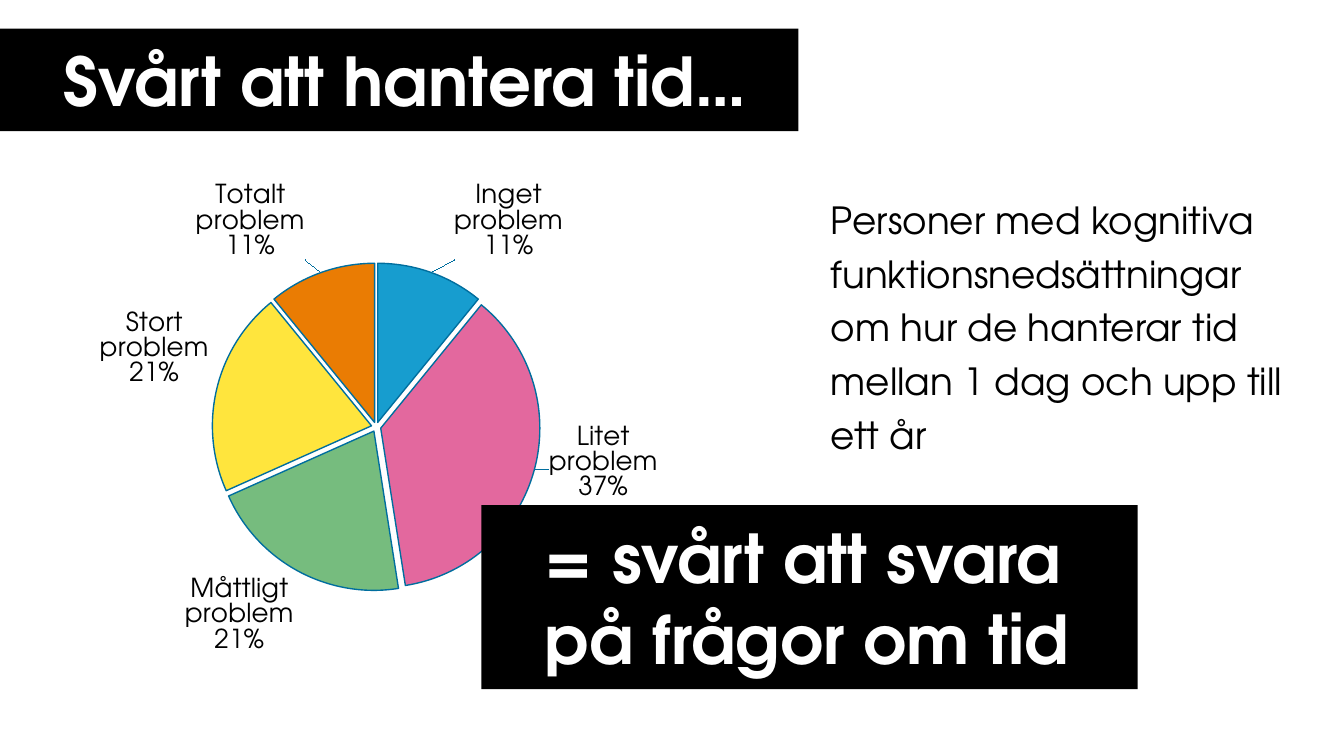
from copy import deepcopy
from dataclasses import dataclass

from lxml import etree
from pptx import Presentation
from pptx.chart import data
from pptx.dml.color import RGBColor
from pptx.enum import chart as charts, shapes, text
from pptx.oxml import ns
from pptx.util import Cm, Pt


@dataclass(frozen=True)
class Theme:
    font: str = "TeX Gyre Adventor"
    black: RGBColor = RGBColor(0, 0, 0)
    white: RGBColor = RGBColor(255, 255, 255)
    edge: RGBColor = RGBColor.from_string("006E9E")
    head: Pt = Pt(36)
    body: Pt = Pt(20)
    label: Pt = Pt(14)


theme = Theme()
parts = [
    ("Inget problem", 11, "179DCF"),
    ("Litet problem", 37, "E3689E"),
    ("Måttligt problem", 21, "76BC7E"),
    ("Stort problem", 21, "FFE53D"),
    ("Totalt problem", 11, "EA7C03"),
]
# Label moves, as shares of the chart's width and height
moves = {0: (0.03, -0.01), 1: (0.01, -0.09), 4: (-0.02, -0.01)}


def style(font, size, color, bold=False):
    font.name = theme.font
    font.size = size
    font.bold = bold
    font.color.rgb = color


def banner(words, left, top, width, height, wrap):
    """Add a black bar with a white heading."""
    bar = slide.shapes.add_shape(
        shapes.MSO_SHAPE.RECTANGLE, Cm(left), Cm(top), Cm(width), Cm(height))
    bar.shadow.inherit = False
    bar.fill.solid()
    bar.fill.fore_color.rgb = theme.black
    bar.line.fill.background()
    frame = bar.text_frame
    frame.word_wrap = wrap
    frame.vertical_anchor = text.MSO_ANCHOR.MIDDLE
    frame.margin_left, frame.margin_right = Cm(1.2), Cm(0.5)
    frame.margin_top = frame.margin_bottom = Cm(0.2)
    para = frame.paragraphs[0]
    para.text = words
    para.alignment = text.PP_ALIGN.LEFT
    style(para.font, theme.head, theme.white, True)


deck = Presentation()
deck.slide_width, deck.slide_height = Cm(25.4), Cm(14.28)
slide = deck.slides.add_slide(deck.slide_layouts[6])

banner("Svårt att hantera tid…", 0, 0.54, 15.09, 1.94, False)

# Explanation
box = slide.shapes.add_textbox(Cm(15.7), Cm(3.55), Cm(8.61), Cm(6.1))
frame = box.text_frame
frame.word_wrap = True
frame.margin_left = frame.margin_right = 0
frame.margin_top = frame.margin_bottom = 0
para = frame.paragraphs[0]
para.text = ("Personer med kognitiva funktionsnedsättningar om hur de "
             "hanterar tid mellan 1 dag och upp till ett år")
para.line_spacing = 1.2
style(para.font, theme.body, theme.black)

# Pie chart
table = data.CategoryChartData()
table.categories = [name for name, share, color in parts]
table.add_series("Series 1", [share for name, share, color in parts])
chart = slide.shapes.add_chart(
    charts.XL_CHART_TYPE.PIE, Cm(0.71), Cm(3.13), Cm(12.8), Cm(9.68), table).chart
chart.has_legend = False
chart.has_title = False
style(chart.font, theme.label, theme.black)
plot = chart.plots[0]
plot.vary_by_categories = False
pie = plot.series[0]
pie.format.line.color.rgb = theme.edge
for index, (name, share, color) in enumerate(parts):
    look = pie.points[index].format
    look.fill.solid()
    look.fill.fore_color.rgb = RGBColor.from_string(color)
    look.line.color.rgb = theme.edge
    look.line.width = Pt(0.75)

labels = pie.data_labels
labels.show_value = False
labels.show_category_name = True
labels.show_percentage = True
labels.number_format = "0%"
labels.number_format_is_linked = False
labels.position = charts.XL_LABEL_POSITION.OUTSIDE_END
style(labels.font, theme.label, theme.black)

# Label line breaks and gaps between slices
root = labels._element
root.find(".//" + ns.qn("a:bodyPr")).set("wrap", "square")
split = etree.Element(ns.qn("c:separator"))
split.text = "\n"
root.find(ns.qn("c:showBubbleSize")).addnext(split)
gap = etree.Element(ns.qn("c:explosion"), val="3")
pie._element.find(ns.qn("c:dPt")).addprevious(gap)

# Labels moved clear of the slices and the lower banner
shared = [part for part in root if part.tag != ns.qn("c:showLeaderLines")]
for spot, (index, (x, y)) in enumerate(moves.items()):
    label = etree.Element(ns.qn("c:dLbl"))
    etree.SubElement(label, ns.qn("c:idx"), val=str(index))
    layout = etree.SubElement(label, ns.qn("c:layout"))
    manual = etree.SubElement(layout, ns.qn("c:manualLayout"))
    etree.SubElement(manual, ns.qn("c:x"), val=str(x))
    etree.SubElement(manual, ns.qn("c:y"), val=str(y))
    label.extend(deepcopy(part) for part in shared)
    root.insert(spot, label)

# Place of the pie
area = chart._chartSpace.find(".//" + ns.qn("c:plotArea"))
for old in area.findall(ns.qn("c:layout")):
    area.remove(old)
layout = etree.Element(ns.qn("c:layout"))
area.insert(0, layout)
manual = etree.SubElement(layout, ns.qn("c:manualLayout"))
for tag, value in [("layoutTarget", "inner"), ("xMode", "edge"),
                   ("yMode", "edge"), ("x", "0.25"), ("y", "0.19"),
                   ("w", "0.5"), ("h", "0.64")]:
    etree.SubElement(manual, ns.qn("c:" + tag), val=value)

banner("= svårt att svara på frågor om tid", 9.1, 9.54, 12.4, 3.48, True)

deck.save("out.pptx")
